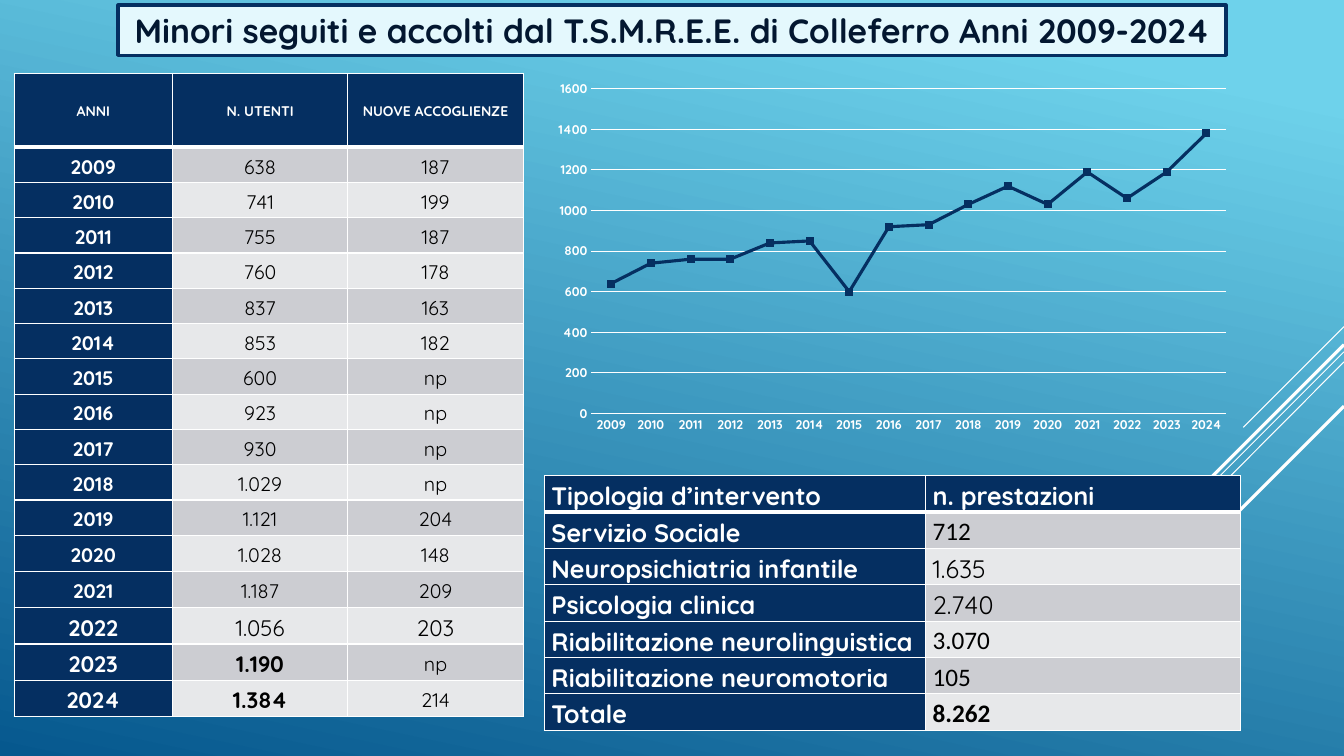
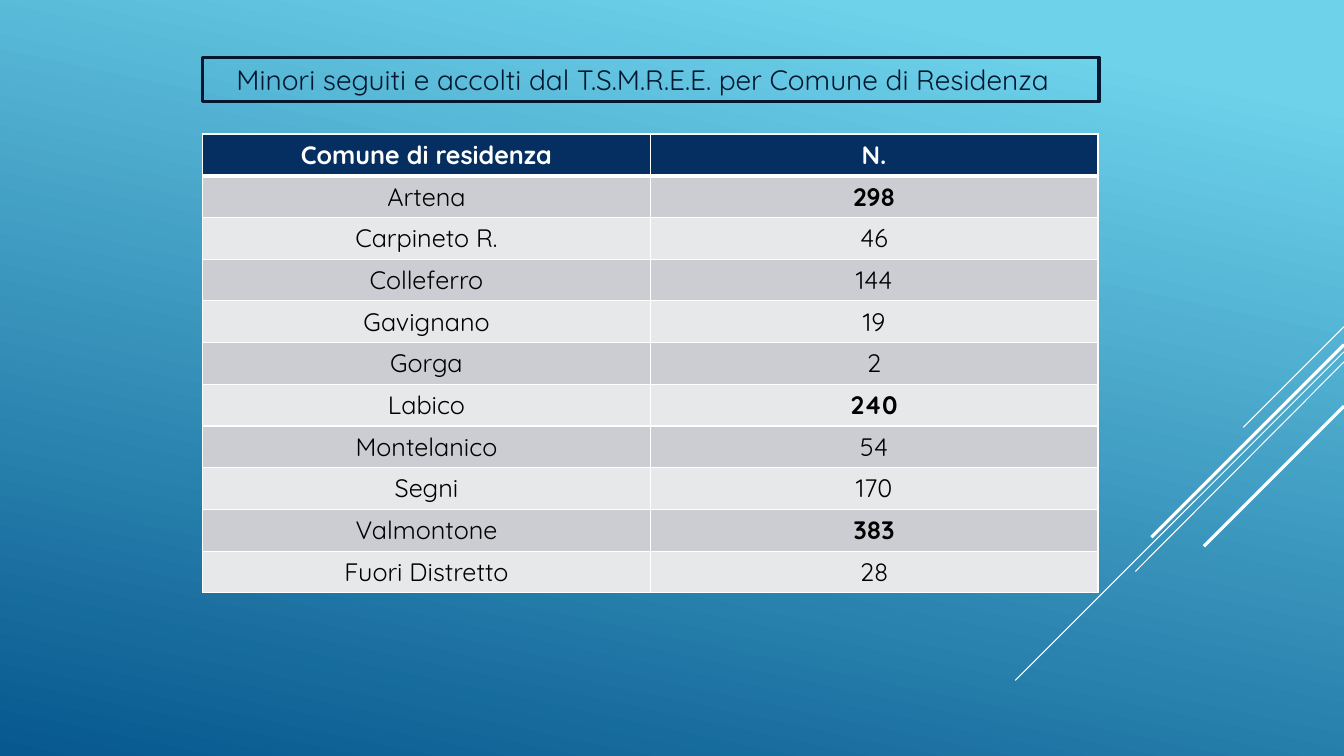
from dataclasses import dataclass, field

from lxml import etree
from pptx import Presentation
from pptx.chart.data import CategoryChartData
from pptx.dml.color import RGBColor
from pptx.enum.chart import XL_CHART_TYPE, XL_TICK_MARK
from pptx.enum.shapes import MSO_CONNECTOR
from pptx.enum.text import MSO_ANCHOR, MSO_AUTO_SIZE, PP_ALIGN
from pptx.oxml.ns import qn
from pptx.util import Inches, Pt

LINE = XL_CHART_TYPE.LINE
NO_TICK = XL_TICK_MARK.NONE
STRAIGHT = MSO_CONNECTOR.STRAIGHT
TOP, MIDDLE = MSO_ANCHOR.TOP, MSO_ANCHOR.MIDDLE
NO_FIT = MSO_AUTO_SIZE.NONE
LEFT, CENTER = PP_ALIGN.LEFT, PP_ALIGN.CENTER


@dataclass(frozen=True)
class Theme:
    navy: str = "052F61"
    ink: str = "031730"
    white: str = "FFFFFF"
    black: str = "000000"
    pale: str = "E4F8FD"
    sky: str = "6ED2EB"
    sea: str = "06588E"
    bands: tuple = ("CCCDD2", "E7E8EA")
    font: str = "Quicksand"
    plain: str = "Calibri"
    big: int = 24
    title: int = 20
    large: int = 18
    mid: int = 16
    body: int = 14
    small: int = 10
    tiny: int = 9
    thin: float = 0.75
    edge: int = 1
    bold: float = 2.25
    thick: int = 3


@dataclass
class Look:
    size: int
    head: int
    pad: tuple
    align: int = CENTER
    anchor: int = MIDDLE
    lead: bool = True
    side: bool = True
    marks: dict = field(default_factory=dict)


T = Theme()

YEARS = [
    ("ANNI", "N. UTENTI", "NUOVE ACCOGLIENZE"),
    ("2009", "638", "187"),
    ("2010", "741", "199"),
    ("2011", "755", "187"),
    ("2012", "760", "178"),
    ("2013", "837", "163"),
    ("2014", "853", "182"),
    ("2015", "600", "np"),
    ("2016", "923", "np"),
    ("2017", "930", "np"),
    ("2018", "1.029", "np"),
    ("2019", "1.121", "204"),
    ("2020", "1.028", "148"),
    ("2021", "1.187", "209"),
    ("2022", "1.056", "203"),
    ("2023", "1.190", "np"),
    ("2024", "1.384", "214"),
]
CARE = [
    ("Tipologia d’intervento", "n. prestazioni"),
    ("Servizio Sociale", "712"),
    ("Neuropsichiatria infantile", "1.635"),
    ("Psicologia clinica", "2.740"),
    ("Riabilitazione neurolinguistica", "3.070"),
    ("Riabilitazione neuromotoria", "105"),
    ("Totale", "8.262"),
]
TOWNS = [
    ("Comune di residenza", "N."),
    ("Artena", "298"),
    ("Carpineto R.", "46"),
    ("Colleferro", "144"),
    ("Gavignano", "19"),
    ("Gorga", "2"),
    ("Labico", "240"),
    ("Montelanico", "54"),
    ("Segni", "170"),
    ("Valmontone", "383"),
    ("Fuori Distretto", "28"),
]
RAYS = [
    (3.24, 12.33, 4.24, T.thin),
    (3.49, 10.07, 6.75, T.thin),
    (3.59, 11.26, 5.67, T.thin),
    (3.42, 11.42, 5.33, T.bold),
    (4.03, 11.94, 5.42, T.bold),
]


def rgb(tone):
    return RGBColor.from_string(tone)


def ink(font, size, tone, bold=False, name=T.font):
    font.size, font.bold, font.name = Pt(size), bold, name
    font.color.rgb = rgb(tone)


def stroke(line, tone, width):
    line.color.rgb = rgb(tone)
    line.width = Pt(width)


def dress(master, slide):
    fill = master.background.fill
    fill.gradient()
    fill.gradient_angle = 258
    for stop, spot, tone in zip(fill.gradient_stops, (0.1, 1), (T.sky, T.sea)):
        stop.position = spot
        stop.color.rgb = rgb(tone)
    for top, x, y, width in RAYS:
        ray = slide.shapes.add_connector(
            STRAIGHT, Inches(13.33), Inches(top), Inches(x), Inches(y))
        stroke(ray.line, T.white, width)
        etree.SubElement(ray.element.spPr, qn("a:effectLst"))
        master.shapes.element.append(ray.element)


def banner(slide, box, text, size, bold, fill, edge, anchor, right=0.1):
    title = slide.shapes.title
    title.left, title.top, title.width, title.height = map(Inches, box)
    if fill:
        title.fill.solid()
        title.fill.fore_color.rgb = rgb(fill)
    stroke(title.line, edge, T.bold)
    frame = title.text_frame
    frame.text = text
    frame.word_wrap, frame.auto_size = True, NO_FIT
    frame.vertical_anchor = anchor
    frame.margin_right = Inches(right)
    part = frame.paragraphs[0]
    part.alignment = CENTER
    ink(part.runs[0].font, size, T.ink, bold)


def border(cell, row):
    props = cell._tc.get_or_add_tcPr()
    thick = {"lnB": row == 0, "lnT": row == 1}
    for spot, tag in enumerate(("lnL", "lnR", "lnT", "lnB")):
        width = T.thick if thick.get(tag) else T.edge
        line = etree.Element(qn("a:" + tag), w=str(Pt(width)))
        fill = etree.SubElement(line, qn("a:solidFill"))
        etree.SubElement(fill, qn("a:srgbClr"), val=T.white)
        props.insert(spot, line)


def fill_cell(cell, text, row, col, look):
    dark = row == 0 or (look.side and col == 0)
    cell.fill.solid()
    cell.fill.fore_color.rgb = rgb(T.navy if dark else T.bands[(row - 1) % 2])
    border(cell, row)
    cell.vertical_anchor = look.anchor
    across, down = map(Inches, look.pad)
    cell.margin_left = cell.margin_right = across
    cell.margin_top = cell.margin_bottom = down
    cell.text_frame.text = text
    part = cell.text_frame.paragraphs[0]
    part.alignment = look.align
    if look.lead:
        part.line_spacing, part.space_after = 1.15, Pt(10)
    style = {"size": look.size if row else look.head, "bold": dark}
    style.update(look.marks.get((row, col), {}))
    ink(part.runs[0].font, tone=T.white if dark else T.black, **style)


def grid(slide, spot, widths, heights, rows, look):
    left, top = spot
    table = slide.shapes.add_table(
        len(rows), len(widths), Inches(left), Inches(top),
        Inches(sum(widths)), Inches(sum(heights))).table
    table.horz_banding = False
    for col, width in zip(table.columns, widths):
        col.width = Inches(width)
    for line, height in zip(table.rows, heights):
        line.height = Inches(height)
    for row, texts in enumerate(rows):
        for col, text in enumerate(texts):
            fill_cell(table.cell(row, col), text, row, col, look)


def trend(slide, box, rows):
    data = CategoryChartData()
    data.categories = [row[0] for row in rows]
    data.add_series(
        "Series 1", [round(int(row[1].replace(".", "")), -1) for row in rows])
    chart = slide.shapes.add_chart(LINE, *map(Inches, box), data).chart
    chart.has_legend = chart.has_title = False
    ink(chart.font, T.small, T.white)
    line = chart.plots[0].series[0]
    line.smooth = False
    line.marker.style = None
    stroke(line.format.line, T.navy, T.bold)
    chart.plots[0].vary_by_categories = False
    years, count = chart.category_axis, chart.value_axis
    for axis in (years, count):
        axis.major_tick_mark = axis.minor_tick_mark = NO_TICK
        ink(axis.tick_labels.font, T.tiny, T.white, True)
    stroke(years.format.line, T.white, T.thin)
    count.format.line.fill.background()
    stroke(count.major_gridlines.format.line, T.white, T.thin)
    count.minimum_scale, count.maximum_scale, count.major_unit = 0, 1600, 200


def yearly(slide):
    banner(slide, (1.17, 0.05, 10.99, 0.5),
           "Minori seguiti e accolti dal T.S.M.R.E.E. di Colleferro Anni 2009-2024",
           T.big, True, T.pale, T.navy, MIDDLE)
    marks = {(14, col): {"size": T.mid} for col in range(3)}
    marks.update({(row, col): {"size": T.mid, "bold": True}
                  for row in (15, 16) for col in (0, 1)})
    grid(slide, (0.14, 0.73), (1.57, 1.74, 1.74),
         [0.73] + [0.35] * 11 + [0.36] * 5, YEARS,
         Look(T.body, T.small, (0.05, 0), marks=marks))
    trend(slide, (5.4, 0.73, 6.9, 3.64), YEARS[1:])
    marks = {(row, 1): {"name": T.plain, "bold": row == 6}
             for row in (1, 4, 5, 6)}
    grid(slide, (5.4, 4.72), (3.78, 3.12), [0.34] * len(CARE), CARE,
         Look(T.large, T.large, (0.07, 0), LEFT, TOP, marks=marks))


def local(slide):
    banner(slide, (2.01, 0.57, 8.89, 0.44),
           "Minori seguiti e accolti dal T.S.M.R.E.E. per Comune di Residenza",
           T.title, False, None, T.ink, TOP, 0.26)
    marks = {(row, 1): {"bold": True} for row in (1, 6, 9)}
    grid(slide, (2.01, 1.33), (4.44, 4.44), [0.41] * len(TOWNS), TOWNS,
         Look(T.large, T.large, (0.1, 0.05), CENTER, TOP, False, False, marks))


def main():
    deck = Presentation()
    deck.slide_width, deck.slide_height = Inches(13.33), Inches(7.5)
    layout = deck.slide_layouts[5]
    first, second = [deck.slides.add_slide(layout) for _ in range(2)]
    dress(deck.slide_master, first)
    yearly(first)
    local(second)
    deck.save("out.pptx")


if __name__ == "__main__":
    main()
